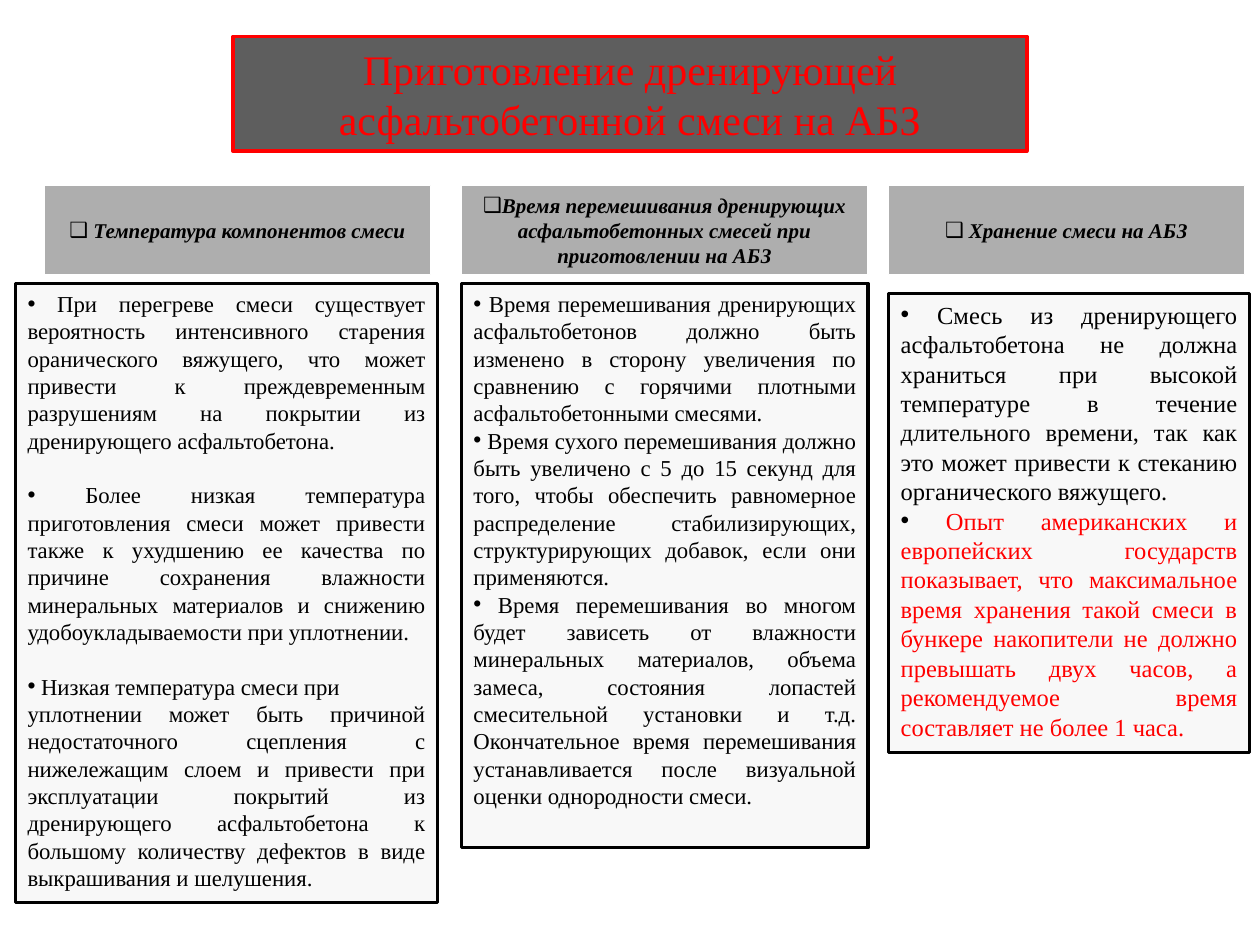
"""Builds a slide on preparing a draining asphalt mix at the plant."""
from dataclasses import dataclass

from lxml import etree
from pptx import Presentation
from pptx.dml.color import RGBColor
from pptx.enum.shapes import MSO_SHAPE
from pptx.enum.text import MSO_ANCHOR, PP_ALIGN
from pptx.oxml.ns import qn
from pptx.util import Inches, Pt

RECTANGLE = MSO_SHAPE.RECTANGLE
TOP, MIDDLE = MSO_ANCHOR.TOP, MSO_ANCHOR.MIDDLE
CENTER, JUSTIFY = PP_ALIGN.CENTER, PP_ALIGN.JUSTIFY


@dataclass(frozen=True)
class Theme:
    font: str = "Times New Roman"
    black: str = "000000"
    white: str = "FFFFFF"
    red: str = "FF0000"
    gray: str = "808080"
    pale: str = "F2F2F2"
    title_size: float = 24
    heading_size: float = 12
    paragraph_gap: float = 15.6


@dataclass(frozen=True)
class Item:
    text: str
    bullet: str = "•"
    gap: float = 0
    color: str = Theme.black


class SlideBuilder:
    def __init__(self, slide, theme):
        self.slide = slide
        self.theme = theme

    def panel(self, place, fill, opacity, outline, weight, anchor):
        shape = self.slide.shapes.add_shape(RECTANGLE, *map(Inches, place))
        shape.shadow.inherit = False
        shape.fill.solid()
        shape.fill.fore_color.rgb = RGBColor.from_string(fill)
        color = shape.fill._xPr.find(qn("a:solidFill"))[0]
        etree.SubElement(color, qn("a:alpha")).set("val", str(opacity * 1000))
        shape.line.color.rgb = RGBColor.from_string(outline)
        shape.line.width = Pt(weight)
        frame = shape.text_frame
        frame.word_wrap = True
        frame.vertical_anchor = anchor
        return frame

    def bullet(self, paragraph, mark, indent):
        properties = paragraph._p.get_or_add_pPr()
        properties.set("marL", str(Inches(indent)))
        properties.set("indent", str(-Inches(indent)))
        etree.SubElement(properties, qn("a:buFont")).set("typeface", "Arial")
        etree.SubElement(properties, qn("a:buChar")).set("char", mark)

    def style(self, paragraph, size, color, align, emphasis=False):
        paragraph.alignment = align
        for run in paragraph.runs:
            run.font.name = self.theme.font
            run.font.size = Pt(size)
            run.font.bold = run.font.italic = emphasis
            run.font.color.rgb = RGBColor.from_string(color)

    def title(self, place, text):
        theme = self.theme
        frame = self.panel(place, theme.black, 63, theme.red, 2, MIDDLE)
        frame.text = text
        self.style(frame.paragraphs[0], theme.title_size, theme.red, CENTER)

    def heading(self, place, text, indent):
        theme = self.theme
        frame = self.panel(place, theme.gray, 63, theme.white, 0.75, MIDDLE)
        frame.text = text
        paragraph = frame.paragraphs[0]
        self.bullet(paragraph, "❑", indent)
        self.style(paragraph, theme.heading_size, theme.black, CENTER, True)

    def body(self, place, items, size):
        theme = self.theme
        frame = self.panel(place, theme.pale, 48, theme.black, 1.75, TOP)
        frame.text = "\n".join(item.text for item in items)
        for paragraph, item in zip(frame.paragraphs, items):
            if item.gap:
                paragraph.space_before = Pt(item.gap)
            if item.bullet:
                self.bullet(paragraph, item.bullet, 0)
                paragraph.runs[0].text = " " + item.text
            self.style(paragraph, size, theme.black, JUSTIFY)
            paragraph.runs[0].font.color.rgb = RGBColor.from_string(item.color)
            if item.color != theme.black:
                self.lead_space(paragraph, item.text, size, item.color)

    def lead_space(self, paragraph, text, size, color):
        paragraph.runs[0].text = " "
        paragraph.add_run().text = text
        self.style(paragraph, size, color, JUSTIFY)
        paragraph.runs[0].font.color.rgb = RGBColor.from_string(self.theme.black)


GAP = Theme.paragraph_gap
TEMPERATURE = [
    Item("При перегреве смеси существует вероятность интенсивного старения "
         "оранического вяжущего, что может привести к преждевременным "
         "разрушениям на покрытии из дренирующего асфальтобетона."),
    Item("Более низкая температура приготовления смеси может привести также к "
         "ухудшению ее качества по причине сохранения влажности минеральных "
         "материалов и снижению удобоукладываемости при уплотнении.", gap=GAP),
    Item("Низкая температура смеси при", gap=GAP),
    Item("уплотнении может быть причиной недостаточного сцепления с нижележащим "
         "слоем и привести при эксплуатации покрытий из дренирующего "
         "асфальтобетона к большому количеству дефектов в виде выкрашивания и "
         "шелушения.", bullet=""),
]
MIXING = [
    Item("Время перемешивания дренирующих асфальтобетонов должно быть изменено "
         "в сторону увеличения по сравнению с горячими плотными "
         "асфальтобетонными смесями."),
    Item("Время сухого перемешивания должно быть увеличено с 5 до 15 секунд для "
         "того, чтобы обеспечить равномерное распределение стабилизирующих, "
         "структурирующих добавок, если они применяются."),
    Item("Время перемешивания во многом будет зависеть от влажности минеральных "
         "материалов, объема замеса, состояния лопастей смесительной установки "
         "и т.д. Окончательное время перемешивания устанавливается после "
         "визуальной оценки однородности смеси."),
]
STORAGE = [
    Item("Смесь из дренирующего асфальтобетона не должна храниться при высокой "
         "температуре в течение длительного времени, так как это может привести "
         "к стеканию органического вяжущего."),
    Item("Опыт американских и европейских государств показывает, что "
         "максимальное время хранения такой смеси в бункере накопители не "
         "должно превышать двух часов, а рекомендуемое время составляет не "
         "более 1 часа.", color=Theme.red),
]
COLUMNS = [
    ("Температура компонентов смеси", 0.35, 3.07, 0.19,
     (0.12, 2.25, 3.35, 4.91), TEMPERATURE, 13),
    ("Время перемешивания дренирующих асфальтобетонных смесей при "
     "приготовлении на АБЗ", 3.66, 3.23, 0,
     (3.66, 2.25, 3.23, 4.48), MIXING, 13),
    ("Хранение смеси на АБЗ", 7.05, 2.83, 0.19,
     (7.05, 2.33, 2.87, 3.64), STORAGE, 14),
]


def main():
    deck = Presentation()
    deck.slide_width, deck.slide_height = Inches(10), Inches(7.5)
    builder = SlideBuilder(deck.slides.add_slide(deck.slide_layouts[6]), Theme())
    builder.title((1.85, 0.29, 6.3, 0.91),
                  "Приготовление дренирующей асфальтобетонной смеси на АБЗ")
    for heading, left, width, indent, body_place, items, size in COLUMNS:
        builder.heading((left, 1.47, width, 0.71), heading, indent)
        builder.body(body_place, items, size)
    deck.save("out.pptx")


if __name__ == "__main__":
    main()
